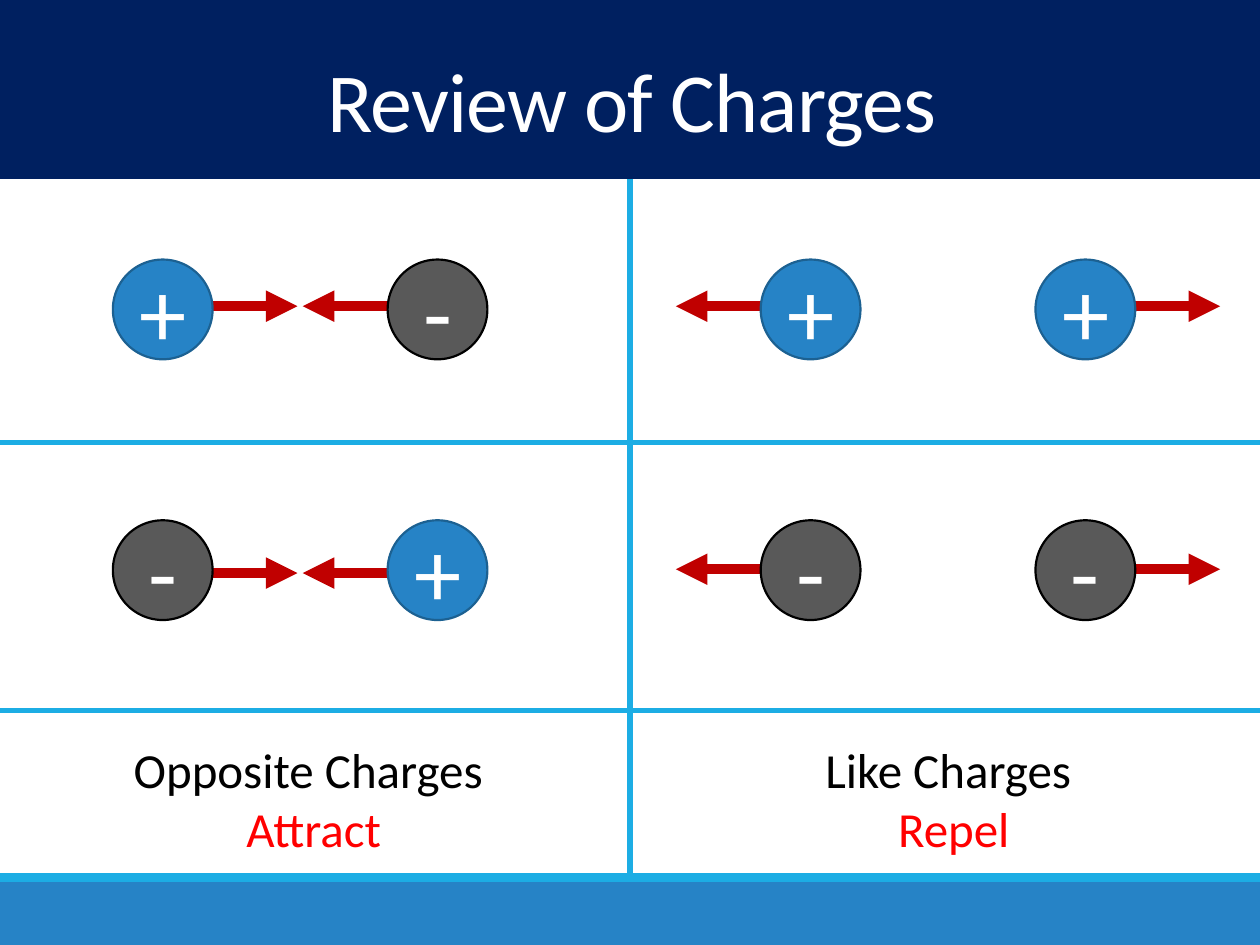
from lxml.etree import SubElement
from pptx import Presentation
from pptx.dml.color import RGBColor
from pptx.enum.shapes import MSO_CONNECTOR, MSO_SHAPE
from pptx.enum.text import MSO_ANCHOR, MSO_AUTO_SIZE, PP_ALIGN
from pptx.oxml.ns import qn
from pptx.util import Pt

WIDTH, HEIGHT = 720, 540
BANNER_HEIGHT = 102.24
MIDDLE = WIDTH / 2
DIAMETER = 57
ARROW_LENGTH = 48.5


def color(value):
    return RGBColor.from_string(value)


def apply(target, formats):
    for key, value in formats.items():
        setattr(target, key, value)


class ChargeSlide:
    navy, blue, cyan, red = "002060", "2683C6", "1CADE4", "C00000"
    charges = {"+": (blue, "1C6192"), "-": ("595959", "000000")}
    font = "Calibri"

    def __init__(self, slide):
        self.slide = slide
        self.shapes = slide.shapes

    def label(self, paragraph, text, size, fill):
        paragraph.alignment = PP_ALIGN.CENTER
        run = paragraph.add_run()
        run.text = text
        apply(run.font, {"name": self.font, "size": Pt(size)})
        run.font.color.rgb = color(fill)

    def shape(self, kind, left, top, width, height, fill):
        figure = self.shapes.add_shape(kind, Pt(left), Pt(top), Pt(width), Pt(height))
        figure.shadow.inherit = False
        figure.fill.solid()
        figure.fill.fore_color.rgb = color(fill)
        figure.line.fill.background()
        return figure

    def band(self, top, height, fill):
        return self.shape(MSO_SHAPE.RECTANGLE, 0, top, WIDTH, height, fill)

    def title(self, text, banner):
        heading = self.shapes.title
        apply(heading, {"left": Pt(2), "top": Pt(30.5), "width": Pt(718), "height": Pt(60.5)})
        apply(heading.text_frame, {"word_wrap": True, "auto_size": MSO_AUTO_SIZE.NONE,
                                   "vertical_anchor": MSO_ANCHOR.MIDDLE})
        paragraph = heading.text_frame.paragraphs[0]
        paragraph.line_spacing = 0.85
        self.label(paragraph, text, 48, "FFFFFF")
        for properties in heading.element.iter(qn("a:rPr")):
            properties.set("spc", "-50")
        banner.element.addnext(heading.element)

    def line(self, start, end, fill, weight):
        stroke = self.shapes.add_connector(
            MSO_CONNECTOR.STRAIGHT, *(Pt(value) for value in (*start, *end)))
        stroke.line.color.rgb = color(fill)
        stroke.line.width = Pt(weight)
        SubElement(stroke.element.spPr, qn("a:effectLst"))
        return stroke

    def divider(self, start, end):
        self.line(start, end, self.cyan, 3)

    def arrow(self, start, end):
        force = self.line(start, end, self.red, 6)
        SubElement(force.element.spPr.find(qn("a:ln")), qn("a:tailEnd"), type="triangle")

    def charge(self, sign, left, top):
        fill, outline = self.charges[sign]
        particle = self.shape(MSO_SHAPE.OVAL, left, top, DIAMETER, DIAMETER, fill)
        particle.line.color.rgb = color(outline)
        particle.line.width = Pt(1.25)
        particle.text_frame.vertical_anchor = MSO_ANCHOR.MIDDLE
        self.label(particle.text_frame.paragraphs[0], sign, 54, "FFFFFF")

    def caption(self, left, width, pairing, effect):
        box = self.shapes.add_textbox(Pt(left), Pt(419), Pt(width), Pt(75))
        frame = box.text_frame
        apply(frame, {"word_wrap": False, "auto_size": MSO_AUTO_SIZE.SHAPE_TO_FIT_TEXT})
        self.label(frame.paragraphs[0], pairing, 28, "000000")
        self.label(frame.add_paragraph(), effect, 28, "FF0000")


def main():
    deck = Presentation()
    apply(deck, {"slide_width": Pt(WIDTH), "slide_height": Pt(HEIGHT)})
    page = ChargeSlide(deck.slides.add_slide(deck.slide_layouts[5]))

    page.band(504, 36, page.blue)
    page.band(499, 5, page.cyan)
    banner = page.band(0, BANNER_HEIGHT, page.navy)
    page.title("Review of Charges", banner)

    for row_end in (252.8, 406):
        page.divider((0, row_end), (WIDTH, row_end))
    page.divider((MIDDLE, BANNER_HEIGHT), (MIDDLE, 501))

    page.caption(69, 220.5, "Opposite Charges ", "Attract")
    page.caption(464.5, 161, "Like Charges ", "Repel")

    attract, repel = (1, -1), (-1, 1)
    pairs = [
        ("+-", attract, (64.5, 221.5), 148.3, 175),
        ("-+", attract, (64.5, 221.5), 297.3, 327.5),
        ("++", repel, (434.7, 591.7), 148.3, 175),
        ("--", repel, (434.7, 591.7), 297.3, 325.3),
    ]
    for signs, directions, lefts, top, arrow_y in pairs:
        for sign, direction, left in zip(signs, directions, lefts):
            edge = left + DIAMETER if direction > 0 else left
            page.arrow((edge, arrow_y), (edge + direction * ARROW_LENGTH, arrow_y))
            page.charge(sign, left, top)

    deck.save("out.pptx")


if __name__ == "__main__":
    main()
